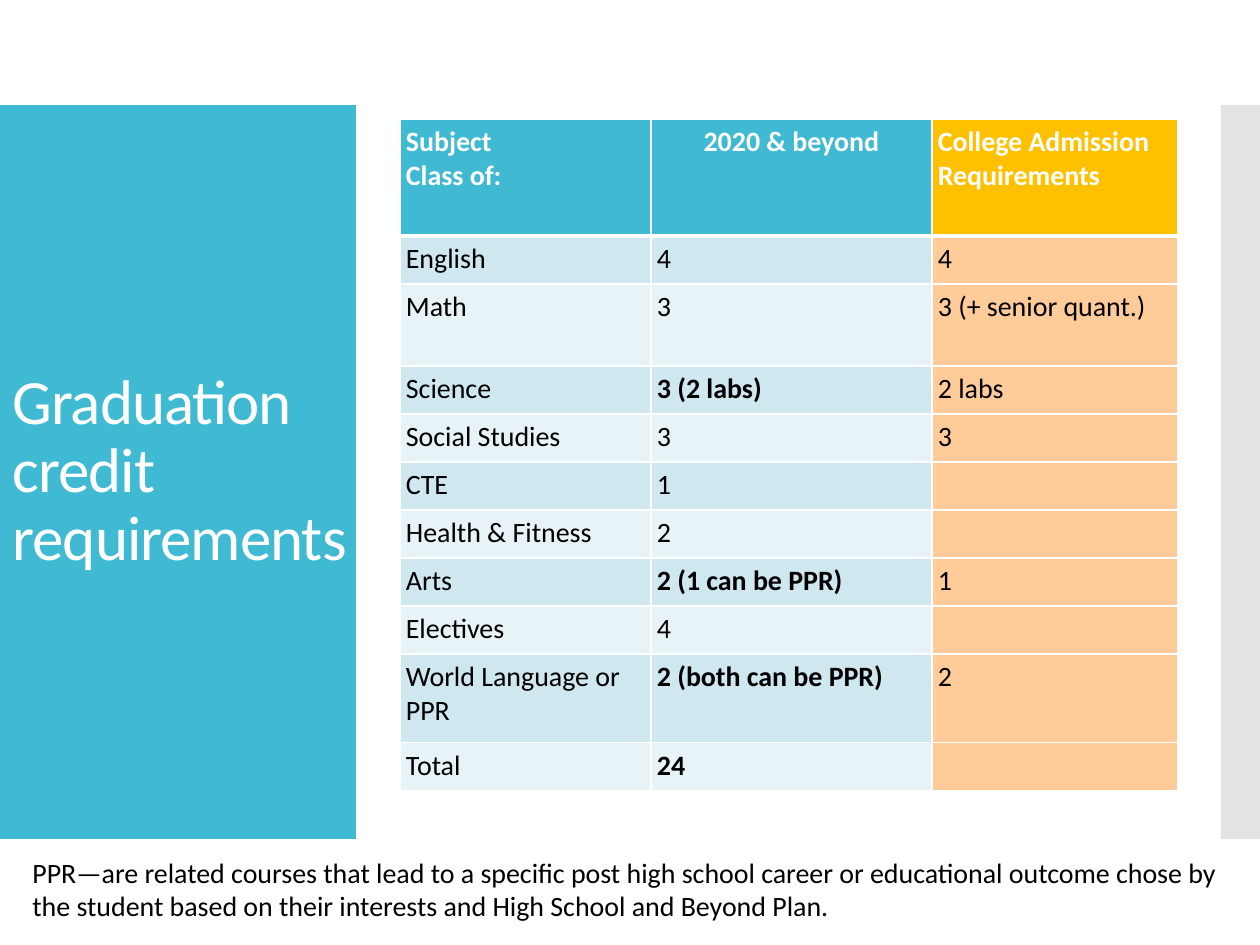
"""Build the graduation credit requirements slide."""
from typing import NamedTuple

from lxml import etree
from pptx import Presentation
from pptx import util as u
from pptx.dml.color import RGBColor
from pptx.enum import shapes, text
from pptx.oxml import ns

PX = 914400 / 126
FONT = "Calibri"
WHITE = RGBColor(0xFF, 0xFF, 0xFF)
BLACK = RGBColor(0x00, 0x00, 0x00)
TEAL = RGBColor(0x40, 0xBA, 0xD2)
GOLD = RGBColor(0xFF, 0xC0, 0x00)
PEACH = RGBColor(0xFF, 0xCC, 0x99)
GREY = RGBColor(0xC8, 0xC8, 0xC8)
BANDS = (RGBColor(0xCF, 0xE7, 0xEE), RGBColor(0xE8, 0xF3, 0xF7))


class Box(NamedTuple):
    left: int
    top: int
    width: int
    height: int


class Panel(NamedTuple):
    box: Box
    color: RGBColor
    opacity: int


class Row(NamedTuple):
    subject: str
    credits: str
    college: str = ""
    bold: bool = False
    height: int = 48


PANELS = (
    Panel(Box(0, 105, 356, 734), TEAL, 100),
    Panel(Box(1221, 105, 39, 734), GREY, 50),
)
TITLE = Box(0, 155, 365, 634)
TABLE = Box(400, 119, 778, 676)
NOTE = Box(20, 849, 1219, 81)
COLUMNS = (251, 281, 246)
HEADER = Row("Subject\vClass of:", "2020 & beyond",
             "College Admission Requirements", True, 117)
ROWS = (
    Row("English", "4", "4"),
    Row("Math", "3", "3 (+ senior quant.)", height=82),
    Row("Science", "3 (2 labs)", "2 labs", True),
    Row("Social Studies", "3", "3"),
    Row("CTE", "1"),
    Row("Health & Fitness", "2"),
    Row("Arts", "2 (1 can be PPR)", "1", True),
    Row("Electives", "4"),
    Row("World Language or PPR", "2 (both can be PPR)", "2", True, 89),
    Row("Total", "24", bold=True),
)
NOTE_TEXT = (
    "PPR—are related courses that lead to a specific post high school career "
    "or educational outcome chose by the student based on their interests and "
    "High School and Beyond Plan."
)


def px(n: float) -> u.Emu:
    """Turn pixels into EMU."""
    return u.Emu(round(n * PX))


def emu(box: Box) -> list:
    """Turn a box into EMU lengths."""
    return [px(n) for n in box]


def style(p, size: int, color: RGBColor, bold: bool = False) -> None:
    """Format a paragraph's font."""
    p.font.name = FONT
    p.font.size = u.Pt(size)
    p.font.bold = bold
    p.font.color.rgb = color


def add_panel(slide, panel: Panel) -> None:
    """Draw a plain rectangle behind the title."""
    sp = slide.shapes.add_shape(shapes.MSO_SHAPE.RECTANGLE, *emu(panel.box))
    sp.shadow.inherit = False
    sp.line.fill.background()
    sp.fill.solid()
    sp.fill.fore_color.rgb = panel.color
    if panel.opacity < 100:
        clr = sp.element.spPr.find(f".//{ns.qn('a:srgbClr')}")
        etree.SubElement(clr, ns.qn("a:alpha"), val=str(panel.opacity * 1000))
    slide.shapes.title.element.addprevious(sp.element)


def set_title(slide, words: str) -> None:
    """Place and format the title placeholder."""
    sp = slide.shapes.title
    sp.left, sp.top, sp.width, sp.height = emu(TITLE)
    tf = sp.text_frame
    tf.text = words
    tf.word_wrap = True
    tf.auto_size = text.MSO_AUTO_SIZE.NONE
    tf.vertical_anchor = text.MSO_ANCHOR.MIDDLE
    p = tf.paragraphs[0]
    p.alignment = text.PP_ALIGN.LEFT
    p.line_spacing = 0.9
    style(p, 36, WHITE)
    p.runs[0].font._element.set("spc", "-60")


def set_borders(cell, bottom: int) -> None:
    """Give a cell white borders, ahead of its fill."""
    tc_pr = cell._tc.get_or_add_tcPr()
    widths = {"lnL": 1, "lnR": 1, "lnT": 1, "lnB": bottom}
    for i, (tag, width) in enumerate(widths.items()):
        ln = etree.Element(ns.qn(f"a:{tag}"), w=str(u.Pt(width)))
        fill = etree.SubElement(ln, ns.qn("a:solidFill"))
        etree.SubElement(fill, ns.qn("a:srgbClr"), val=str(WHITE))
        tc_pr.insert(i, ln)


def fill_cell(cell, words: str, fill: RGBColor, color: RGBColor,
              bold: bool, bottom: int) -> None:
    """Write and format one table cell."""
    cell.margin_left = cell.margin_right = px(6)
    cell.margin_top = cell.margin_bottom = px(6)
    cell.fill.solid()
    cell.fill.fore_color.rgb = fill
    set_borders(cell, bottom)
    p = cell.text_frame.paragraphs[0]
    style(p, 16, color, bold)
    if words:
        p.text = words
    else:
        p._p.get_or_add_endParaRPr().set("sz", "1600")


def add_credit_table(slide) -> None:
    """Draw the table of credits by subject."""
    rows = (HEADER, *ROWS)
    table = slide.shapes.add_table(len(rows), len(COLUMNS), *emu(TABLE)).table
    table.first_row = table.horz_banding = False
    for column, width in zip(table.columns, COLUMNS):
        column.width = px(width)
    for i, row in enumerate(rows):
        head = i == 0
        table.rows[i].height = px(row.height)
        band = TEAL if head else BANDS[(i - 1) % 2]
        fills = (band, band, GOLD if head else PEACH)
        for j, words in enumerate(row[:3]):
            fill_cell(table.cell(i, j), words, fills[j],
                      WHITE if head else BLACK,
                      head or (row.bold and j == 1), 3 if head else 1)
    table.cell(0, 1).text_frame.paragraphs[0].alignment = text.PP_ALIGN.CENTER


def add_note(slide) -> None:
    """Write the explanation below the table."""
    tf = slide.shapes.add_textbox(*emu(NOTE)).text_frame
    tf.word_wrap = True
    tf.auto_size = text.MSO_AUTO_SIZE.SHAPE_TO_FIT_TEXT
    tf.text = NOTE_TEXT
    style(tf.paragraphs[0], 16, BLACK)


def main() -> None:
    """Build and save the presentation."""
    prs = Presentation()
    prs.slide_width, prs.slide_height = px(1260), px(945)
    slide = prs.slides.add_slide(prs.slide_layouts[5])
    for panel in PANELS:
        add_panel(slide, panel)
    set_title(slide, "Graduation credit requirements")
    add_credit_table(slide)
    add_note(slide)
    prs.save("out.pptx")


if __name__ == "__main__":
    main()
